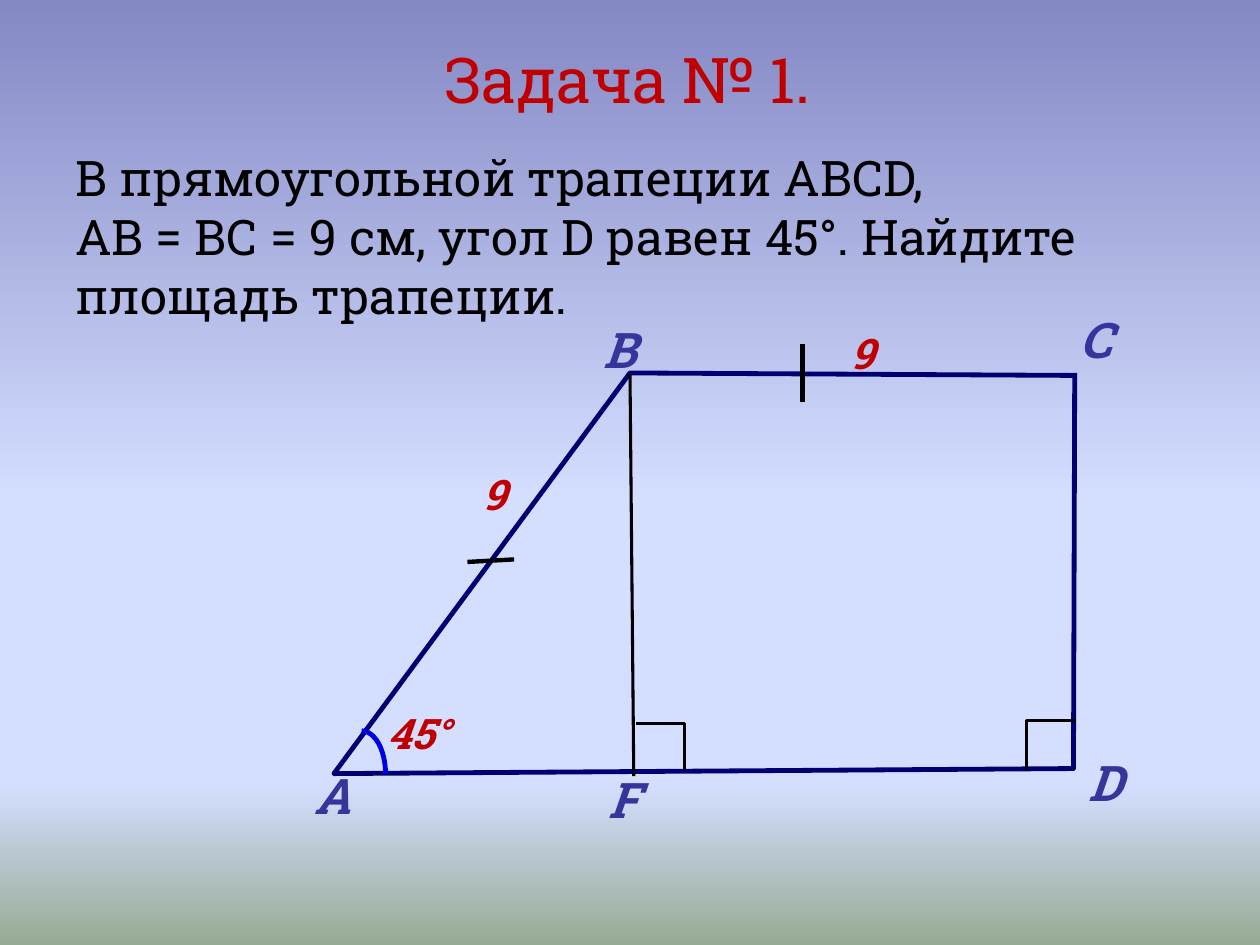
from copy import deepcopy
from dataclasses import dataclass

from lxml import etree
from pptx import Presentation
from pptx import util as u
from pptx.dml import color as dml
from pptx.enum import shapes, text
from pptx.oxml import ns

FONT = "Roboto Slab"
RED, INDIGO, NAVY, BLUE, BLACK = "C00000", "35359B", "000073", "0000E6", "000000"
GRADIENT = [(0, "8488C4"), (0.53, "D4DEFF"), (0.83, "D4DEFF"), (1, "96AB94")]


@dataclass
class Label:
    wording: str
    left: float
    top: float
    width: float
    height: float = 0.57
    size: int = 28
    color: str = INDIGO


@dataclass
class Outline:
    points: list[tuple[float, float]]
    color: str = BLACK
    weight: float = 1.75


@dataclass
class Segment:
    start: tuple[float, float]
    end: tuple[float, float]
    weight: float = 2.5


VERTEX_LABELS = [
    Label("А", 2.4, 6.03, 0.46),
    Label("B", 4.69, 2.49, 0.48),
    Label("C", 8.47, 2.41, 0.48),
    Label("D", 8.54, 5.92, 0.5),
    Label("F", 4.73, 6.06, 0.46),
]
MEASURE_LABELS = [
    Label("9", 3.73, 3.67, 0.43, 0.5, 24, RED),
    Label("9", 6.65, 2.55, 0.43, 0.5, 24, RED),
    Label("45°", 2.98, 5.57, 0.8, 0.5, 24, RED),
]
TRAPEZOID = Outline(
    [(8.53, 2.96), (8.52, 6.1), (2.65, 6.14), (5, 2.96), (8.52, 2.98)], NAVY, 2.75
)
RIGHT_ANGLES = [
    Outline([(8.54, 5.72), (8.15, 5.72), (8.15, 6.11)]),
    Outline([(5.43, 6.11), (5.43, 5.74), (5.05, 5.74)]),
]
TICKS = [Segment((3.71, 4.46), (4.08, 4.44)), Segment((6.37, 3.19), (6.37, 2.73))]
HEIGHT = Segment((5, 2.97), (5.03, 6.16), 1.75)


def rgb(value: str) -> dml.RGBColor:
    """Turn a hex string into a colour."""
    return dml.RGBColor.from_string(value)


def paint_background(slide) -> None:
    """Fill the background with the vertical gradient."""
    fill = slide.background.fill
    fill.gradient()
    fill.gradient_angle = 270
    stop_list = slide.element.find(".//" + ns.qn("a:gsLst"))
    for _ in range(len(GRADIENT) - len(stop_list)):
        stop_list.append(deepcopy(stop_list[-1]))
    for stop, (position, color) in zip(fill.gradient_stops, GRADIENT):
        stop.position = position
        stop.color.rgb = rgb(color)


def format_text(text_frame, size: int, color: str, strong: bool = False) -> None:
    """Apply the font to every run of a text frame."""
    for paragraph in text_frame.paragraphs:
        for run in paragraph.runs:
            font = run.font
            font.name, font.size = FONT, u.Pt(size)
            font.bold = font.italic = strong
            font.color.rgb = rgb(color)


def format_line(shape, color: str, weight: float) -> None:
    """Set the colour and width of a line."""
    shape.line.color.rgb = rgb(color)
    shape.line.width = u.Pt(weight)


def add_title(slide, wording: str) -> None:
    """Place the centred title."""
    title = slide.shapes.title
    title.left, title.top = u.Inches(0.48), u.Inches(0)
    title.width, title.height = u.Inches(9), u.Inches(1.25)
    title.text_frame.text = wording
    title.text_frame.vertical_anchor = text.MSO_ANCHOR.MIDDLE
    title.text_frame.paragraphs[0].alignment = text.PP_ALIGN.CENTER
    format_text(title.text_frame, 36, RED)


def add_problem(slide, wording: str) -> None:
    """Place the wrapped problem statement."""
    box = slide.shapes.add_textbox(*map(u.Inches, (0.5, 1.12, 9.01, 1.51)))
    box.text_frame.word_wrap = True
    box.text_frame.text = wording
    format_text(box.text_frame, 28, BLACK)


def add_label(slide, label: Label) -> None:
    """Place a bold italic label on the drawing."""
    box = slide.shapes.add_textbox(
        *map(u.Inches, (label.left, label.top, label.width, label.height))
    )
    box.text_frame.word_wrap = False
    box.text_frame.auto_size = text.MSO_AUTO_SIZE.SHAPE_TO_FIT_TEXT
    box.text_frame.text = label.wording
    format_text(box.text_frame, label.size, label.color, strong=True)


def add_outline(slide, outline: Outline) -> None:
    """Draw an open unfilled polyline."""
    points = [(u.Inches(x), u.Inches(y)) for x, y in outline.points]
    builder = slide.shapes.build_freeform(*points[0])
    builder.add_line_segments(points[1:], close=False)
    shape = builder.convert_to_shape()
    shape.shadow.inherit = False
    shape.fill.background()
    format_line(shape, outline.color, outline.weight)


def add_segment(slide, segment: Segment) -> None:
    """Draw a straight black line without a shadow."""
    connector = slide.shapes.add_connector(
        shapes.MSO_CONNECTOR.STRAIGHT, *map(u.Inches, segment.start + segment.end)
    )
    format_line(connector, BLACK, segment.weight)
    etree.SubElement(connector.element.spPr, ns.qn("a:effectLst"))


def add_angle_arc(slide) -> None:
    """Draw the arc that marks the angle at vertex A."""
    arc = slide.shapes.add_shape(
        shapes.MSO_SHAPE.ARC, *map(u.Inches, (2.68, 5.8, 0.38, 0.68))
    )
    arc.shadow.inherit = False
    arc.fill.background()
    format_line(arc, BLUE, 2.75)


def main() -> None:
    """Build and save the slide."""
    presentation = Presentation()
    presentation.slide_width, presentation.slide_height = u.Inches(10), u.Inches(7.5)
    slide = presentation.slides.add_slide(presentation.slide_layouts[5])
    paint_background(slide)
    add_title(slide, "Задача № 1.")
    add_problem(
        slide,
        "В прямоугольной трапеции ABCD,\n"
        "АВ = ВС = 9 см, угол D равен 45°. Найдите площадь трапеции.",
    )
    for outline in [TRAPEZOID, *RIGHT_ANGLES]:
        add_outline(slide, outline)
    add_angle_arc(slide)
    for segment in [*TICKS, HEIGHT]:
        add_segment(slide, segment)
    for label in VERTEX_LABELS + MEASURE_LABELS:
        add_label(slide, label)
    presentation.save("out.pptx")


if __name__ == "__main__":
    main()
